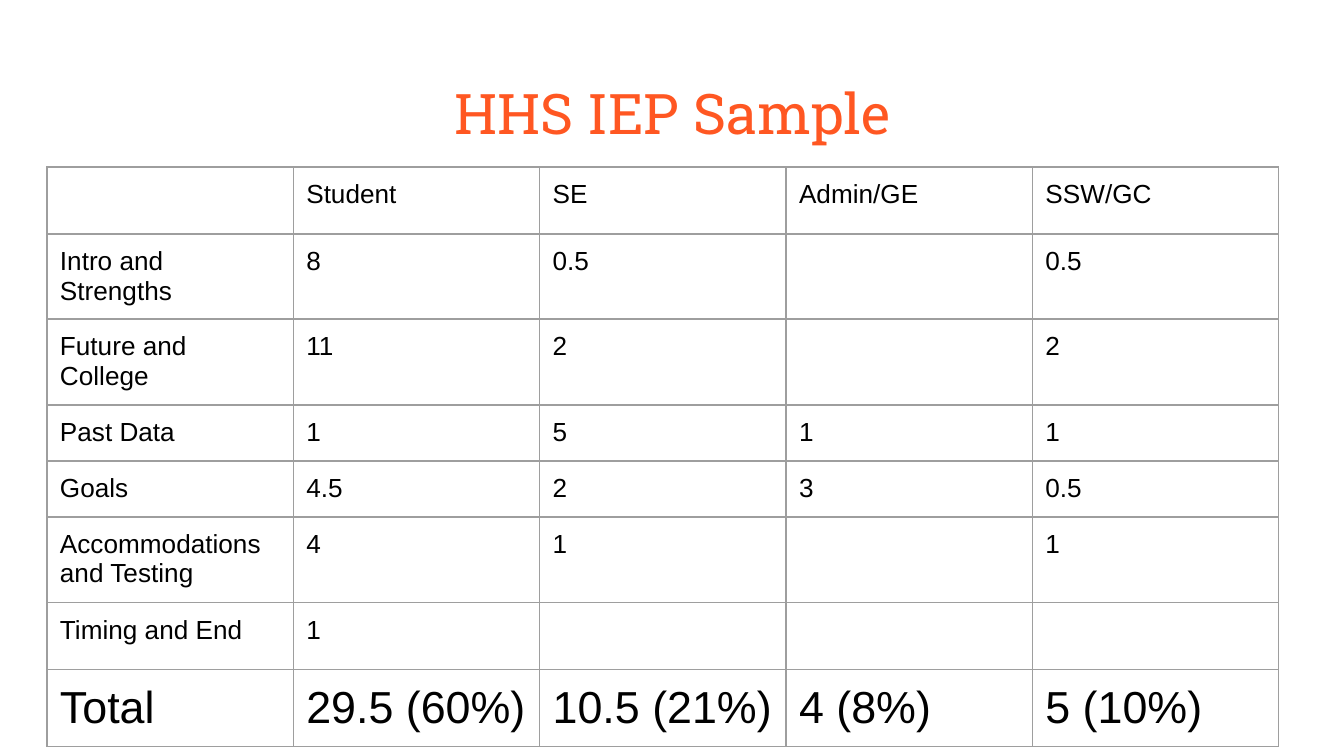
from lxml import etree
from pptx import Presentation
from pptx.dml.color import RGBColor
from pptx.enum.text import MSO_ANCHOR, MSO_AUTO_SIZE, PP_ALIGN
from pptx.oxml.ns import qn
from pptx.util import Pt

PX = 914400 / 134.4
COLORS = {"title": "FF5722", "text": "000000", "border": "9E9E9E", "page": "FFFFFF"}
INSET = 13

ROWS = [
    ["", "Student", "SE", "Admin/GE", "SSW/GC"],
    ["Intro and Strengths", "8", "0.5", "", "0.5"],
    ["Future and College", "11", "2", "", "2"],
    ["Past Data", "1", "5", "1", "1"],
    ["Goals", "4.5", "2", "3", "0.5"],
    ["Accommodations and Testing", "4", "1", "", "1"],
    ["Timing and End", "1", "", "", ""],
    ["Total", "29.5 (60%)", "10.5 (21%)", "4 (8%)", "5 (10%)"],
]
ROW_HEIGHTS = [65, 85, 86, 56, 56, 86, 64, 77]


def emu(px):
    return round(px * PX)


def rgb(name):
    return RGBColor.from_string(COLORS[name])


def add_span(para, text, size, font, color):
    span = para.add_run()
    span.text = text
    span.font.size = Pt(size)
    span.font.name = font
    span.font.color.rgb = rgb(color)


def set_insets(holder):
    for side in ("left", "top", "right", "bottom"):
        setattr(holder, f"margin_{side}", emu(INSET))


def set_borders(cell):
    properties = cell._tc.get_or_add_tcPr()
    for index, side in enumerate(("lnL", "lnR", "lnT", "lnB")):
        line = etree.Element(qn(f"a:{side}"), w=str(Pt(0.75)))
        fill = etree.SubElement(line, qn("a:solidFill"))
        etree.SubElement(fill, qn("a:srgbClr"), val=COLORS["border"])
        properties.insert(index, line)


def place_title(page, left, top, width, height):
    title = page.shapes.title
    title.left, title.top = emu(left), emu(top)
    title.width, title.height = emu(width), emu(height)
    frame = title.text_frame
    frame.auto_size = MSO_AUTO_SIZE.NONE
    frame.word_wrap = True
    frame.vertical_anchor = MSO_ANCHOR.TOP
    set_insets(frame)
    para = frame.paragraphs[0]
    para.alignment = PP_ALIGN.CENTER
    add_span(para, "HHS IEP Sample", 30, "Roboto Slab", "title")


def place_table(page, left, top, width):
    box = [emu(value) for value in (left, top, width, sum(ROW_HEIGHTS))]
    table = page.shapes.add_table(len(ROWS), len(ROWS[0]), *box).table
    table.first_row = table.horz_banding = False
    for column in table.columns:
        column.width = emu(width / len(ROWS[0]))
    for row, height, texts in zip(table.rows, ROW_HEIGHTS, ROWS):
        row.height = emu(height)
        size = 24 if texts[0] == "Total" else 14
        for cell, text in zip(row.cells, texts):
            set_insets(cell)
            cell.fill.background()
            set_borders(cell)
            if text:
                add_span(cell.text_frame.paragraphs[0], text, size, "Arial", "text")


def main():
    deck = Presentation()
    deck.slide_width, deck.slide_height = emu(1344), emu(756)
    page = deck.slides.add_slide(deck.slide_layouts[5])
    page.background.fill.solid()
    page.background.fill.fore_color.rgb = rgb("page")
    place_title(page, 46, 66, 1253, 85)
    place_table(page, 47, 167, 1232)
    deck.save("out.pptx")


if __name__ == "__main__":
    main()
